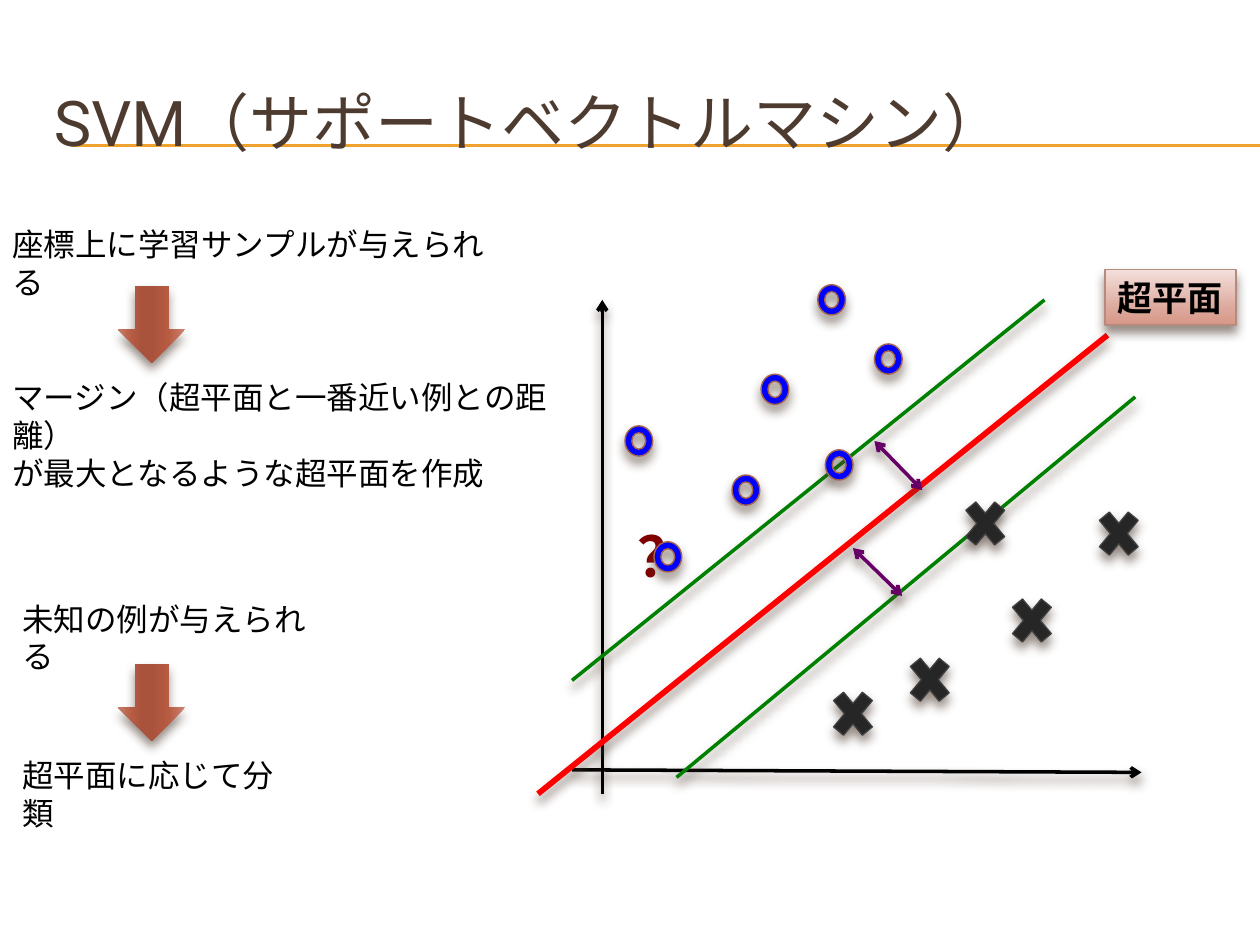
from lxml import etree
from pptx import Presentation
from pptx.dml.color import RGBColor
from pptx.enum import shapes, text
from pptx.oxml.ns import qn
from pptx.util import Inches, Pt

FONT = "Roboto"
SHAPE = shapes.MSO_SHAPE
LABEL_STOPS = [(0, "F3E0DB"), (72, "DCA79B"), (100, "D89787")]
ARROW_STOPS = [(0, "CD8473"), (25, "B75B42"), (50, "AA533C"),
               (65, "AA533C"), (80, "B65B42"), (100, "C77D6B")]
CIRCLES = [(2.28, 1.43), (1.54, 1.63), (1.77, 0.83), (2.67, 0.59),
           (0.69, 1.24), (2.22, 0.12)]
CROSSES = [(3.33, 1.75), (3.7, 2.52), (4.39, 1.83), (2.89, 2.99), (2.28, 3.26)]


def color(value):
    """Turn a hex string into a colour."""
    return RGBColor.from_string(value)


def add_color(parent, value):
    """Append a colour element and return it."""
    return etree.SubElement(parent, qn("a:srgbClr"), val=value)


def add_shadow(sp):
    """Give a shape or connector a soft shadow straight below it."""
    effects = etree.SubElement(sp._element.spPr, qn("a:effectLst"))
    shadow = etree.SubElement(effects, qn("a:outerShdw"), blurRad=str(Pt(6)),
                              dist=str(Pt(4)), dir="5400000", rotWithShape="0")
    etree.SubElement(add_color(shadow, "4E3B30"), qn("a:alpha"), val="60000")


def fill_gradient(sp, stops):
    """Fill a shape with a top-to-bottom gradient."""
    sp.fill.background()
    grad = etree.Element(qn("a:gradFill"), rotWithShape="1")
    stop_list = etree.SubElement(grad, qn("a:gsLst"))
    for pos, value in stops:
        stop = etree.SubElement(stop_list, qn("a:gs"), pos=str(pos * 1000))
        add_color(stop, value)
    etree.SubElement(grad, qn("a:lin"), ang="5400000", scaled="0")
    no_fill = sp._element.spPr.find(qn("a:noFill"))
    no_fill.getparent().replace(no_fill, grad)


def add_line(s, start, end, value, width, head=False, tail=False, shadow=True):
    """Draw a straight line with optional open arrowheads."""
    sp = s.shapes.add_connector(shapes.MSO_CONNECTOR.STRAIGHT,
                                *map(Inches, (*start, *end)))
    sp.line.color.rgb = color(value)
    sp.line.width = Pt(width)
    ln = sp.line._get_or_add_ln()
    for tag, shown in (("a:headEnd", head), ("a:tailEnd", tail)):
        if shown:
            etree.SubElement(ln, qn(tag), type="arrow")
    if shadow:
        add_shadow(sp)
    else:
        etree.SubElement(sp._element.spPr, qn("a:effectLst"))


def add_block(s, kind, box, fill, line=None, width=0.79):
    """Add a shadowed preset shape with a plain or gradient fill."""
    sp = s.shapes.add_shape(kind, *map(Inches, box))
    if isinstance(fill, str):
        sp.fill.solid()
        sp.fill.fore_color.rgb = color(fill)
    else:
        fill_gradient(sp, fill)
    if line:
        sp.line.color.rgb = color(line)
        sp.line.width = Pt(width)
    else:
        sp.line.fill.background()
    add_shadow(sp)
    return sp


def write(sp, lines, size, value="000000", bold=False, wrap=True):
    """Write left-aligned paragraphs into a shape."""
    tf = sp.text_frame
    tf.word_wrap = wrap
    tf.text = "\n".join(lines)
    for p in tf.paragraphs:
        p.alignment = text.PP_ALIGN.LEFT
        p.font.size = Pt(size)
        p.font.bold = bold
        p.font.color.rgb = color(value)
        p.font.name = FONT
        etree.SubElement(p._p.pPr.find(qn("a:defRPr")), qn("a:ea"), typeface=FONT)
    return tf


def add_text(s, box, *lines, size=18, **style):
    """Add a text box."""
    return write(s.shapes.add_textbox(*map(Inches, box)), lines, size, **style)


def add_title(s, x, y, w, h):
    """Place the title over its double rule."""
    for rule_y in (y + 0.65, y + 0.66):
        add_line(s, (x + 0.23, rule_y), (10, rule_y), "F0A22E", 0.75, shadow=False)
    tf = add_text(s, (x, y, w, h), "SVM（サポートベクトルマシン）", size=36, value="4E3B30")
    tf.vertical_anchor = text.MSO_ANCHOR.MIDDLE


def add_steps(s, x, y):
    """Place the training and classification steps with their arrows."""
    add_text(s, (x, y, 4.05, 0.4), "座標上に学習サンプルが与えられる")
    add_text(s, (x, y + 1.21, 4.52, 0.71),
             "マージン（超平面と一番近い例との距離）", "が最大となるような超平面を作成")
    add_text(s, (x + 0.08, y + 2.97, 2.62, 0.4), "未知の例が与えられる")
    add_text(s, (x + 0.08, y + 4.21, 2.38, 0.4), "超平面に応じて分類")
    for dy in (0.57, 3.57):
        sp = add_block(s, SHAPE.RIGHT_ARROW, (x + 0.9, y + dy, 0.61, 0.53), ARROW_STOPS)
        sp.rotation = 90


def add_plot(s, x, y):
    """Place the axes, hyperplane, margins and samples."""
    def line(x1, y1, x2, y2, *style, **ends):
        add_line(s, (x + x1, y + y1), (x + x2, y + y2), *style, **ends)

    def circle(dx, dy):
        add_block(s, SHAPE.DONUT, (x + dx, y + dy, 0.22, 0.24), "0000FF", "A5644E")

    line(0.27, 3.97, 4.79, 3.99, "000000", 2, tail=True)
    line(0.51, 4.16, 0.51, 0.24, "000000", 2, tail=True)
    line(0, 4.16, 4.52, 0.52, "FF0000", 3.25)
    line(0.27, 3.26, 4.02, 0.24, "008000", 2)
    line(1.1, 4.03, 4.74, 1.01, "008000", 2)
    line(2.67, 1.36, 3.05, 1.75, "660066", 2, head=True, tail=True)
    line(2.5, 2.21, 2.89, 2.59, "660066", 2, head=True, tail=True)
    for dx, dy in CIRCLES:
        circle(dx, dy)
    for dx, dy in CROSSES:
        add_block(s, SHAPE.MATH_MULTIPLY, (x + dx, y + dy, 0.44, 0.53),
                  "262626", "404040", 0)
    label = add_block(s, SHAPE.RECTANGLE, (x + 4.5, y, 1.04, 0.44), LABEL_STOPS, "B58B80")
    write(label, ["超平面"], 20, bold=True, wrap=False)
    add_text(s, (x + 0.69, y + 1.95, 0.65, 0.64), "？", size=32, value="800000", bold=True)
    circle(0.92, 2.16)


def main():
    """Build and save the slide."""
    prs = Presentation()
    prs.slide_width, prs.slide_height = Inches(10), Inches(7.5)
    s = prs.slides.add_slide(prs.slide_layouts[6])
    add_title(s, 0.33, 0.5, 9.5, 0.92)
    add_plot(s, 4.27, 2.14)
    add_steps(s, 0, 1.74)
    prs.save("out.pptx")


if __name__ == "__main__":
    main()
